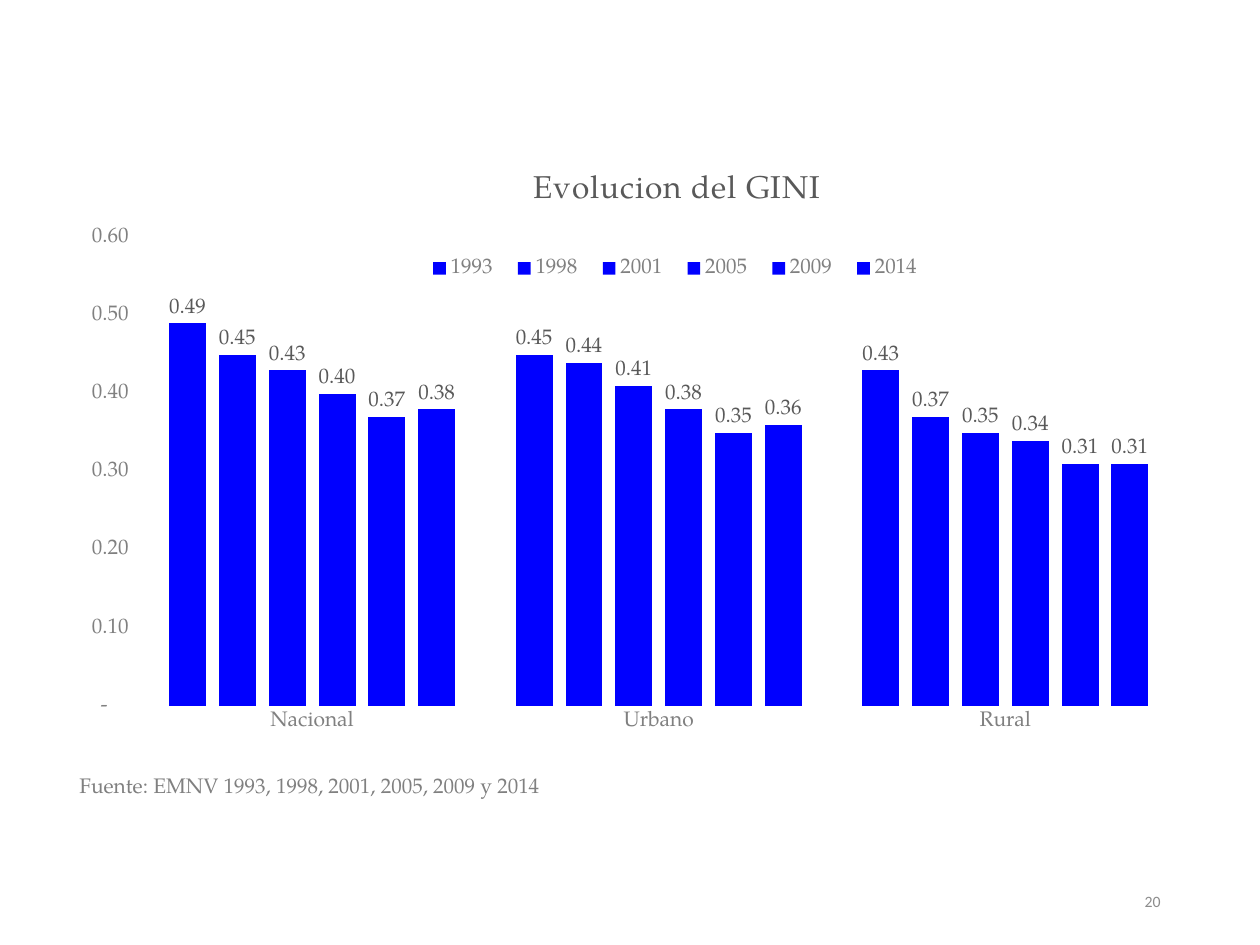
from lxml import etree
from pptx import Presentation
from pptx.chart.data import CategoryChartData
from pptx.dml.color import RGBColor
from pptx.enum import chart as ch, text
from pptx.oxml import ns
from pptx.util import Inches, Pt

REGIONS = ["Nacional", "Urbano", "Rural"]
GINI = {
    "1993": (0.49, 0.45, 0.43),
    "1998": (0.45, 0.44, 0.37),
    "2001": (0.43, 0.41, 0.35),
    "2005": (0.40, 0.38, 0.34),
    "2009": (0.37, 0.35, 0.31),
    "2014": (0.38, 0.36, 0.31),
}
HEADING = "Evolucion del GINI"
SOURCE_NOTE = "Fuente: EMNV 1993, 1998, 2001, 2005, 2009 y 2014"
PAGE_NUMBER = "20"
COLORS = {"bar": "0000FF", "dark": "595959", "gray": "808080", "page": "8C8C8C"}
SERIF = "TeX Gyre Pagella"
NUMBER_FORMAT = '_(* #,##0.00_);_(* \\(#,##0.00\\);_(* "-"??_);_(@_)'


def style(font, size=12, color="gray", name=SERIF):
    font.size, font.name, font.bold = Pt(size), name, False
    font.color.rgb = RGBColor.from_string(COLORS[color])


def write(frame, words, align=None, **look):
    paragraph = frame.paragraphs[0]
    paragraph.alignment = align
    run = paragraph.add_run()
    run.text = words
    style(run.font, **look)
    return run


def place(part, index, **fractions):
    for old in part.findall(ns.qn("c:layout")):
        part.remove(old)
    layout = etree.Element(ns.qn("c:layout"))
    manual = etree.SubElement(layout, ns.qn("c:manualLayout"))
    settings = {"xMode": "edge", "yMode": "edge", **fractions}
    if part.tag == ns.qn("c:plotArea"):
        settings = {"layoutTarget": "inner", **settings}
    for key, value in settings.items():
        etree.SubElement(manual, ns.qn("c:" + key)).set("val", str(value))
    part.insert(index, layout)


def add_gini_chart(slide):
    data = CategoryChartData(number_format=NUMBER_FORMAT)
    data.categories = REGIONS
    for year, values in GINI.items():
        data.add_series(year, values)
    gini = slide.shapes.add_chart(
        ch.XL_CHART_TYPE.COLUMN_CLUSTERED,
        Inches(0.51), Inches(1.05), Inches(8.98), Inches(5.4), data).chart
    style(gini.font)

    heading = write(gini.chart_title.text_frame, HEADING, size=18, color="dark")
    heading.font._element.set("spc", "50")
    place(gini.chart_title._element, 1, x=0.41, y=0.05)

    gini.has_legend = True
    gini.legend.position = ch.XL_LEGEND_POSITION.TOP
    gini.legend.include_in_layout = False
    style(gini.legend.font)
    place(gini.legend._element, 1, x=0.31, y=0.17, w=0.46, h=0.06)

    regions, scale = gini.category_axis, gini.value_axis
    for axis in (regions, scale):
        axis.major_tick_mark = axis.minor_tick_mark = ch.XL_TICK_MARK.NONE
        axis.has_major_gridlines = False
        axis.format.line.fill.background()
        style(axis.tick_labels.font)
    scale.minimum_scale, scale.maximum_scale, scale.major_unit = 0, 0.6, 0.1
    scale.tick_labels.number_format = NUMBER_FORMAT
    scale.tick_labels.number_format_is_linked = False
    write(regions.axis_title.text_frame, SOURCE_NOTE)
    place(regions.axis_title._element, 1, x=0.01, y=0.94)

    plot = gini.plots[0]
    plot.gap_width, plot.overlap, plot.vary_by_categories = 164, -35, False
    place(plot._element.getparent(), 0, x=0.066, y=0.155, w=0.919, h=0.688)
    for series in plot.series:
        series.format.fill.solid()
        series.format.fill.fore_color.rgb = RGBColor.from_string(COLORS["bar"])
        labels = series.data_labels
        labels.show_value = True
        labels.position = ch.XL_LABEL_POSITION.OUTSIDE_END
        labels.number_format = NUMBER_FORMAT
        labels.number_format_is_linked = False
        style(labels.font, color="dark")


def main():
    deck = Presentation()
    deck.slide_width, deck.slide_height = Inches(10), Inches(7.5)
    slide = deck.slides.add_slide(deck.slide_layouts[6])
    add_gini_chart(slide)
    page = slide.shapes.add_textbox(
        Inches(7.06), Inches(6.95), Inches(2.25), Inches(0.4)).text_frame
    page.word_wrap = True
    page.vertical_anchor = text.MSO_ANCHOR.MIDDLE
    write(page, PAGE_NUMBER, text.PP_ALIGN.RIGHT, size=9, color="page", name="Calibri")
    deck.save("out.pptx")


if __name__ == "__main__":
    main()
